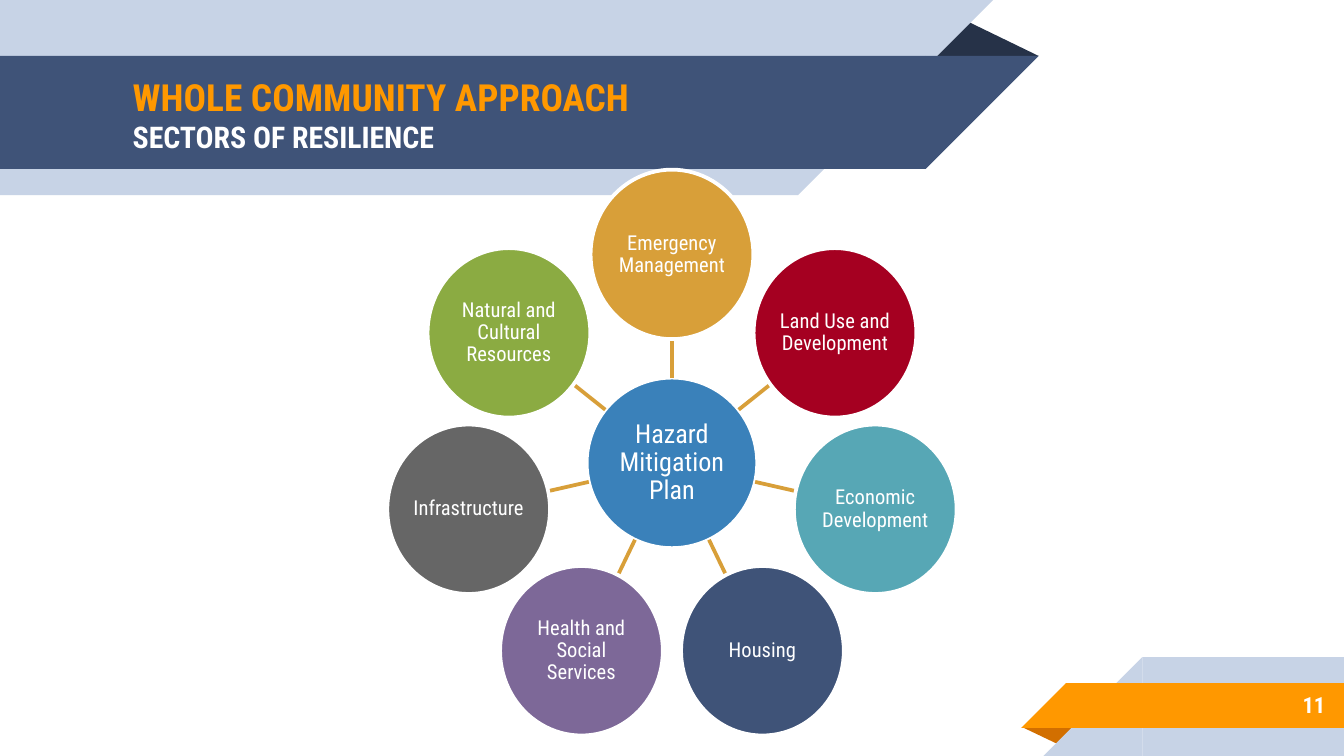
"""Build the whole community approach slide: a hazard plan hub ringed by seven sectors."""
from dataclasses import dataclass
from math import cos, hypot, pi, sin

from lxml.etree import SubElement
from pptx import Presentation
from pptx.dml.color import RGBColor
from pptx.enum.shapes import MSO_CONNECTOR, MSO_SHAPE
from pptx.enum.text import MSO_ANCHOR, PP_ALIGN
from pptx.oxml.ns import qn
from pptx.util import Pt


@dataclass(frozen=True)
class Theme:
    font: str = "Roboto Condensed"
    white: str = "FFFFFF"
    pale: str = "C7D3E6"
    navy: str = "3F5378"
    dark_navy: str = "263248"
    orange: str = "FF9800"
    dark_orange: str = "D26F00"
    hub: str = "3A81BA"
    spoke: str = "D89F39"
    title_size: float = 20
    subtitle_size: float = 16
    hub_size: float = 14
    sector_size: float = 11
    number_size: float = 12
    line: float = 2


@dataclass(frozen=True)
class Block:
    kind: MSO_SHAPE
    left: float
    top: float
    width: float
    height: float
    color: str
    rotation: float = 0


@dataclass(frozen=True)
class Span:
    text: str
    size: float
    color: str
    bold: bool = False


@dataclass(frozen=True)
class Sector:
    label: str
    color: str


THEME = Theme()
BOX, CORNER, FOLD = MSO_SHAPE.RECTANGLE, MSO_SHAPE.RIGHT_TRIANGLE, MSO_SHAPE.ISOSCELES_TRIANGLE
BLOCKS = (
    Block(FOLD, 495.5, 10, 61, 20, THEME.dark_navy),
    Block(BOX, 0, 0, 427.5, 104.5, THEME.pale),
    Block(CORNER, 427.5, 0, 104.5, 104.5, THEME.pale, 90),
    Block(BOX, 0, 30, 496, 60.5, THEME.navy),
    Block(CORNER, 496, 30, 60.5, 60.5, THEME.navy, 90),
    Block(FOLD, 547.5, 389.5, 31, 10, THEME.dark_orange, 180),
    Block(BOX, 612, 352, 108, 53, THEME.pale),
    Block(CORNER, 559, 352, 53, 53, THEME.pale, 270),
    Block(BOX, 571, 366, 149, 24, THEME.orange),
    Block(CORNER, 547, 366, 24, 24, THEME.orange, 270),
)
SECTORS = (
    Sector("Emergency Management", "D89F39"),
    Sector("Land Use and Development", "A50021"),
    Sector("Economic Development", "57A7B5"),
    Sector("Housing", "3F5378"),
    Sector("Health and Social Services", "7D6898"),
    Sector("Infrastructure", "666666"),
    Sector("Natural and Cultural Resources", "8BAB42"),
)
CENTER_X, CENTER_Y = 360, 248
ORBIT = 111.7
HUB_RADIUS = 45.7
SECTOR_RADIUS_X, SECTOR_RADIUS_Y = 43.6, 45.4


def set_all(target: object, values: dict) -> None:
    for name, value in values.items():
        setattr(target, name, value)


def add_block(page, block: Block):
    shape = page.shapes.add_shape(
        block.kind, Pt(block.left), Pt(block.top), Pt(block.width), Pt(block.height))
    shape.shadow.inherit = False
    shape.fill.solid()
    shape.fill.fore_color.rgb = RGBColor.from_string(block.color)
    shape.line.fill.background()
    shape.rotation = block.rotation
    if block.kind == FOLD:
        shape.adjustments[0] = 0.324
    return shape


def write(shape, spans: list[Span], margin: float, paragraph_format: dict) -> None:
    frame = shape.text_frame
    set_all(frame, {"word_wrap": True, "vertical_anchor": MSO_ANCHOR.MIDDLE})
    set_all(frame, {f"margin_{side}": Pt(margin) for side in ("left", "top", "right", "bottom")})
    paragraph = frame.paragraphs[0]
    set_all(paragraph, paragraph_format)
    for index, span in enumerate(spans):
        if index:
            paragraph.add_line_break()
        run = paragraph.add_run()
        run.text = span.text
        set_all(run.font, {"name": THEME.font, "size": Pt(span.size), "bold": span.bold})
        run.font.color.rgb = RGBColor.from_string(span.color)


def add_disc(page, x: float, y: float, radius_x: float, radius_y: float,
             color: str, label: str, size: float) -> None:
    disc = add_block(page, Block(
        MSO_SHAPE.OVAL, x - radius_x, y - radius_y, 2 * radius_x, 2 * radius_y, color))
    disc.line.color.rgb = RGBColor.from_string(THEME.white)
    disc.line.width = Pt(THEME.line)
    write(disc, [Span(label, size, THEME.white)], 0.7,
          {"alignment": PP_ALIGN.CENTER, "line_spacing": 0.9})


def add_spoke(page, across: float, down: float) -> None:
    edge = ORBIT - 1 / hypot(across / SECTOR_RADIUS_X, down / SECTOR_RADIUS_Y)
    ends = [Pt(middle + radius * step) for radius in (HUB_RADIUS, edge)
            for middle, step in ((CENTER_X, across), (CENTER_Y, down))]
    spoke = page.shapes.add_connector(MSO_CONNECTOR.STRAIGHT, *ends)
    spoke.line.color.rgb = RGBColor.from_string(THEME.spoke)
    spoke.line.width = Pt(THEME.line)
    SubElement(spoke.element.spPr, qn("a:effectLst"))


def add_wheel(page) -> None:
    add_disc(page, CENTER_X, CENTER_Y, HUB_RADIUS, HUB_RADIUS,
             THEME.hub, "Hazard Mitigation Plan", THEME.hub_size)
    for index, sector in enumerate(SECTORS):
        angle = 2 * pi * index / len(SECTORS)
        across, down = sin(angle), -cos(angle)
        add_spoke(page, across, down)
        add_disc(page, CENTER_X + ORBIT * across, CENTER_Y + ORBIT * down,
                 SECTOR_RADIUS_X, SECTOR_RADIUS_Y,
                 sector.color, sector.label, THEME.sector_size)


def main() -> None:
    deck = Presentation()
    set_all(deck, {"slide_width": Pt(720), "slide_height": Pt(405)})
    page = deck.slides.add_slide(deck.slide_layouts[6])
    for block in BLOCKS:
        add_block(page, block)
    title = page.shapes.add_textbox(Pt(64), Pt(31), Pt(433), Pt(60.5))
    write(title, [
        Span("WHOLE COMMUNITY APPROACH", THEME.title_size, THEME.orange, True),
        Span("SECTORS OF RESILIENCE", THEME.subtitle_size, THEME.white, True),
    ], 7.2, {"alignment": PP_ALIGN.LEFT})
    number = page.shapes.add_textbox(Pt(600), Pt(365), Pt(117), Pt(25))
    write(number, [Span("11", THEME.number_size, THEME.white, True)], 7.2,
          {"alignment": PP_ALIGN.RIGHT})
    add_wheel(page)
    deck.save("out.pptx")


if __name__ == "__main__":
    main()
